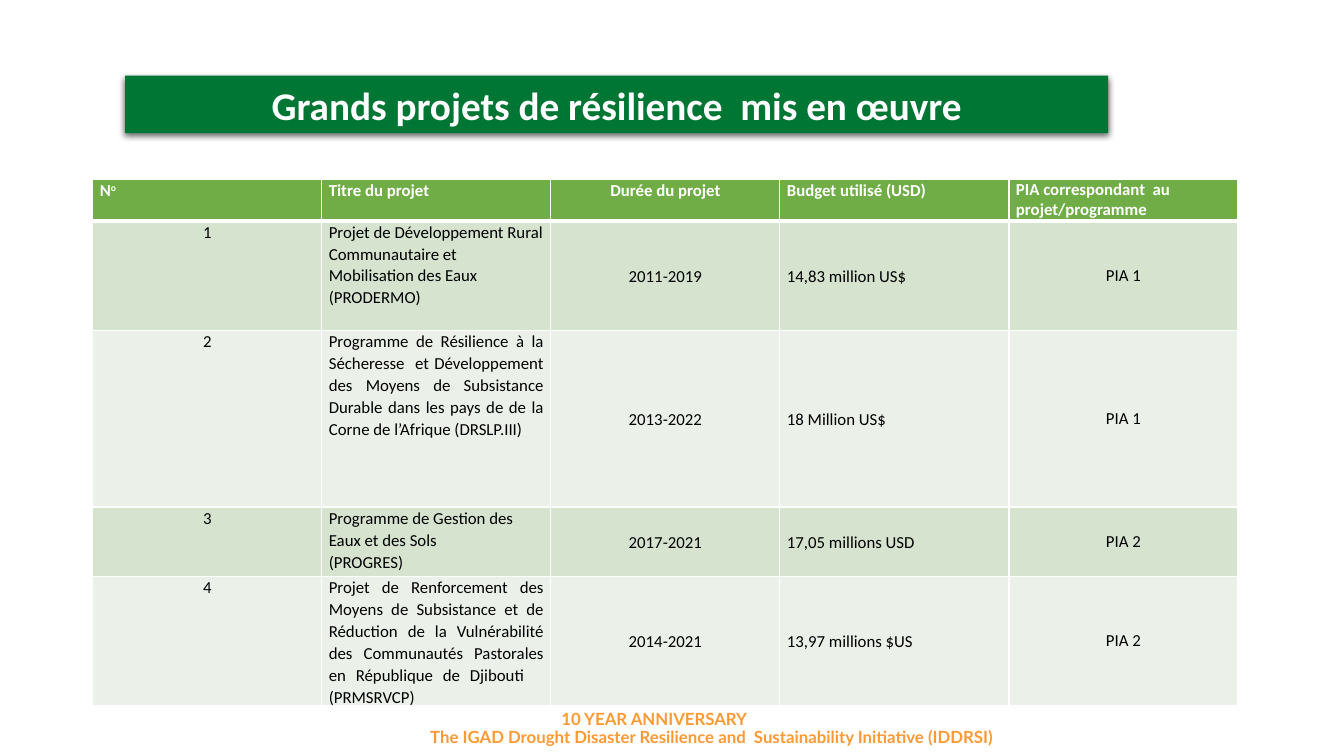
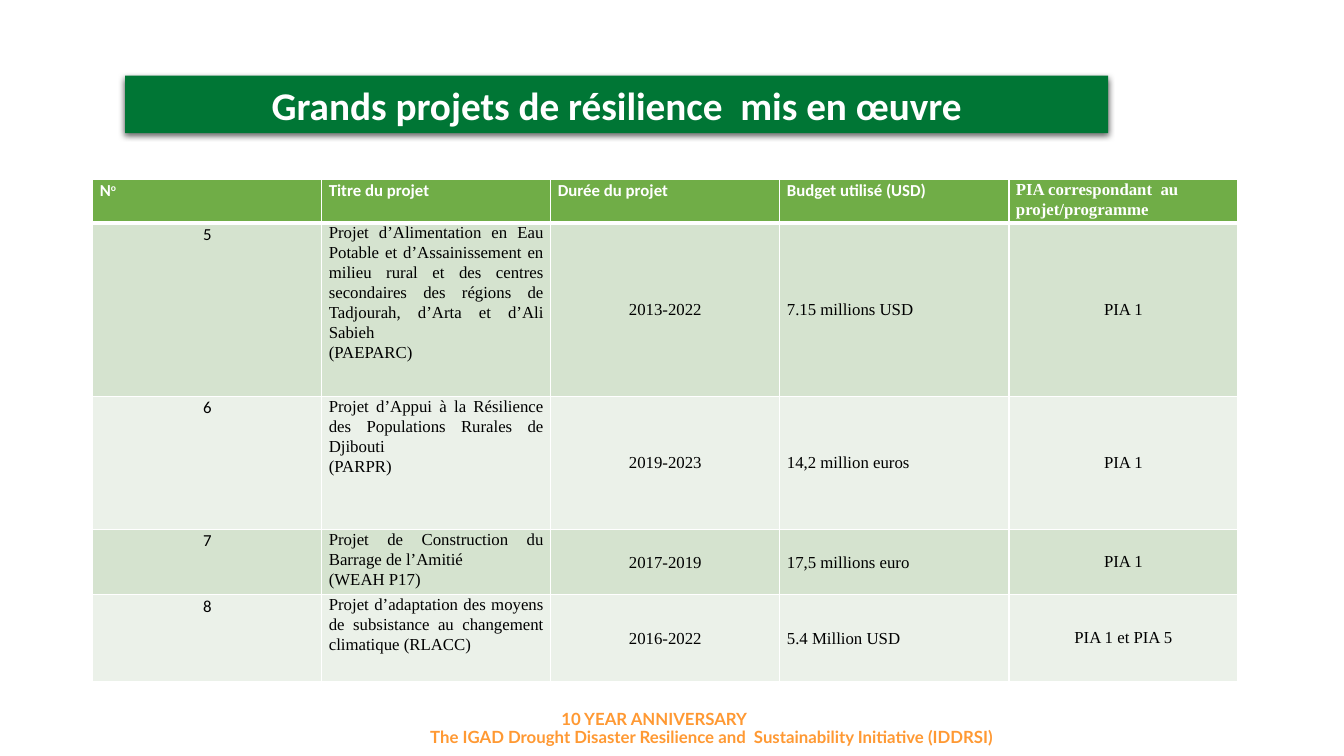
from dataclasses import dataclass

from lxml import etree
from pptx import Presentation
from pptx.dml.color import RGBColor
from pptx.enum.text import MSO_ANCHOR, MSO_AUTO_SIZE, PP_ALIGN
from pptx.oxml import parse_xml
from pptx.oxml.ns import nsdecls
from pptx.util import Inches, Pt


@dataclass(frozen=True)
class Theme:
    title_fill: str = "007635"
    header_fill: str = "70AD47"
    bands: tuple = ("D5E3CF", "EBF1E9")
    white: str = "FFFFFF"
    black: str = "000000"
    footer: str = "FF9933"
    font: str = "Calibri"
    serif: str = "Times New Roman"
    footer_font: str = "Lato"
    title_size: int = 28
    text_size: int = 12
    spacing: float = 1.07


THEME = Theme()
TITLE = "Grands projets de résilience  mis en œuvre"
HEADERS = ["N", "Titre du projet", "Durée du projet", "Budget utilisé (USD)",
           "PIA correspondant  au projet/programme"]
FOOTERS = [
    (3.15, 6.98, "10 YEAR ANNIVERSARY"),
    (3.72, 7.16, "The IGAD Drought Disaster Resilience and  Sustainability Initiative (IDDRSI)"),
]
LEFT, CENTER, JUSTIFY = PP_ALIGN.LEFT, PP_ALIGN.CENTER, PP_ALIGN.JUSTIFY

# Each project: row height, title alignment, cell texts
PROJECTS_1 = [
    (1.09, LEFT, ["1", "Projet de Développement Rural Communautaire et Mobilisation des Eaux (PRODERMO)",
                  "2011-2019", "14,83 million US$", "PIA 1"]),
    (1.75, JUSTIFY, ["2", "Programme de Résilience à la Sécheresse  et Développement des Moyens de "
                          "Subsistance Durable dans les pays de de la Corne de l’Afrique (DRSLP.III)",
                     "2013-2022", "18 Million US$", "PIA 1"]),
    (0.69, LEFT, ["3", "Programme de Gestion des Eaux et des Sols\n(PROGRES)",
                  "2017-2021", "17,05 millions USD", "PIA 2"]),
    (1.05, JUSTIFY, ["4", "Projet de Renforcement des Moyens de Subsistance et de Réduction de la "
                          "Vulnérabilité des Communautés Pastorales en République de Djibouti   (PRMSRVCP)",
                     "2014-2021", "13,97 millions $US", "PIA 2"]),
]
PROJECTS_2 = [
    (1.72, JUSTIFY, ["5", "Projet d’Alimentation en Eau Potable et d’Assainissement en milieu rural et des "
                          "centres secondaires des régions de Tadjourah, d’Arta et d’Ali Sabieh\n(PAEPARC)",
                     "2013-2022", "7.15 millions USD", "PIA 1"]),
    (1.32, JUSTIFY, ["6", "Projet d’Appui à la Résilience des Populations Rurales de Djibouti\n(PARPR)",
                     "2019-2023", "14,2 million euros", "PIA 1"]),
    (0.65, JUSTIFY, ["7", "Projet de Construction du Barrage de l’Amitié\n(WEAH P17)",
                     "2017-2019", "17,5 millions euro", "PIA 1"]),
    (0.86, JUSTIFY, ["8", "Projet d’adaptation des moyens de subsistance au changement climatique (RLACC)",
                     "2016-2022", "5.4 Million USD", "PIA 1 et PIA 5"]),
]


class Deck:
    def __init__(self, theme):
        self.theme = theme
        self.prs = Presentation()
        self.prs.slide_width, self.prs.slide_height = Inches(13.33), Inches(7.5)
        self.slide = None

    def add_slide(self, title):
        self.slide = self.prs.slides.add_slide(self.prs.slide_layouts[5])
        self.title_band(title)
        for left, top, text in FOOTERS:
            self.footer(left, top, text)

    def format_text(self, tf, size, color, font, bold=False, align=LEFT, spacing=1.0):
        for p in tf.paragraphs:
            p.alignment, p.line_spacing = align, spacing
            for r in p.runs:
                r.font.size, r.font.name, r.font.bold = Pt(size), font, bold
                r.font.color.rgb = RGBColor.from_string(color)

    def title_band(self, text):
        t, sp = self.theme, self.slide.shapes.title
        sp.left, sp.top, sp.width, sp.height = map(Inches, (1.24, 0.75, 9.75, 0.57))
        sp.fill.solid()
        sp.fill.fore_color.rgb = RGBColor.from_string(t.title_fill)
        sp.line.fill.background()
        sp._element.spPr.append(parse_xml(
            f'<a:effectLst {nsdecls("a")}><a:outerShdw blurRad="{Pt(4.5)}" dist="{Pt(1.5)}" '
            f'dir="5400000" algn="ctr" rotWithShape="0"><a:srgbClr val="{t.black}">'
            '<a:alpha val="63000"/></a:srgbClr></a:outerShdw></a:effectLst>'))
        tf = sp.text_frame
        tf.text = text
        tf.word_wrap, tf.auto_size = True, MSO_AUTO_SIZE.NONE
        tf.vertical_anchor = MSO_ANCHOR.MIDDLE
        self.format_text(tf, t.title_size, t.white, t.font, bold=True, align=CENTER)

    def footer(self, left, top, text):
        t = self.theme
        tf = self.slide.shapes.add_textbox(*map(Inches, (left, top, 6.68, 0.3))).text_frame
        tf.text, tf.word_wrap = text, True
        self.format_text(tf, t.text_size, t.footer, t.footer_font, bold=True, align=CENTER)

    def borders(self, cell, bottom):
        tcPr = cell._tc.get_or_add_tcPr()
        for side, width in (("L", 1), ("R", 1), ("T", 1), ("B", bottom)):
            ln = parse_xml(f'<a:ln{side} {nsdecls("a")} w="{Pt(width)}"><a:solidFill>'
                           f'<a:srgbClr val="{self.theme.white}"/></a:solidFill></a:ln{side}>')
            tcPr.append(ln)

    def style_cell(self, cell, fill, color, font, bottom=1, anchor=MSO_ANCHOR.TOP, **text_style):
        self.borders(cell, bottom)
        cell.fill.solid()
        cell.fill.fore_color.rgb = RGBColor.from_string(fill)
        cell.margin_left = cell.margin_right = Inches(0.07)
        cell.margin_top = cell.margin_bottom = 0
        cell.vertical_anchor = anchor
        self.format_text(cell.text_frame, self.theme.text_size, color, font, **text_style)

    def project_table(self, projects, header_height, font, duration_align, pia_spacing):
        """Draw the project table; the number column and most headers keep the theme font."""
        t = self.theme
        heights = [header_height] + [height for height, _, _ in projects]
        table = self.slide.shapes.add_table(
            len(heights), len(HEADERS), Inches(0.92), Inches(1.78),
            Inches(11.36), Inches(sum(heights))).table
        for row, height in zip(table.rows, heights):
            row.height = Inches(height)

        header_fonts = [t.font] * 4 + [font]
        header_aligns = [LEFT, LEFT, duration_align, LEFT, LEFT]
        header_spacings = [t.spacing] * 4 + [pia_spacing]
        for i, text in enumerate(HEADERS):
            cell = table.cell(0, i)
            cell.text_frame.text = text
            if i == 0:
                r = cell.text_frame.paragraphs[0].add_run()
                r.text = "o"
                r._r.get_or_add_rPr().set("baseline", "30000")
            self.style_cell(cell, t.header_fill, t.white, header_fonts[i], bottom=3, bold=True,
                            align=header_aligns[i], spacing=header_spacings[i])

        for n, (_, title_align, texts) in enumerate(projects):
            aligns = [CENTER, title_align, CENTER, LEFT, CENTER]
            for i, text in enumerate(texts):
                cell = table.cell(n + 1, i)
                cell.text_frame.text = text
                self.style_cell(cell, t.bands[n % 2], t.black, font if i else t.font,
                                anchor=MSO_ANCHOR.TOP if i < 2 else MSO_ANCHOR.MIDDLE,
                                align=aligns[i], spacing=t.spacing if i < 4 else 1.0)


def main():
    deck = Deck(THEME)
    deck.add_slide(TITLE)
    deck.project_table(PROJECTS_1, 0.41, THEME.font, CENTER, 1.0)
    deck.add_slide(TITLE)
    deck.project_table(PROJECTS_2, 0.43, THEME.serif, LEFT, THEME.spacing)
    deck.prs.save("out.pptx")


if __name__ == "__main__":
    main()
